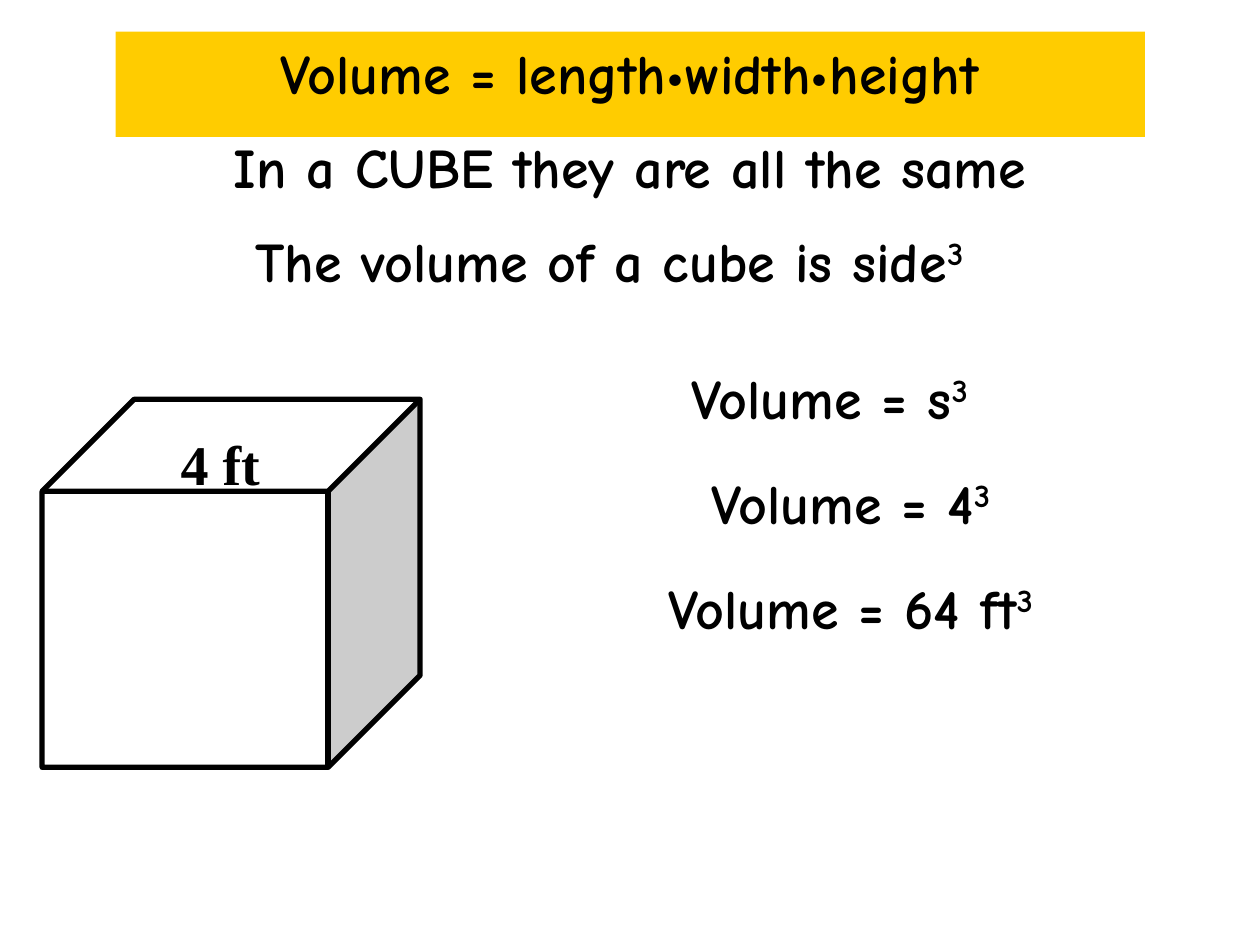
from pptx import Presentation
from pptx.dml.color import RGBColor
from pptx.enum import shapes, text
from pptx.util import Cm, Pt

BLACK = RGBColor(0x00, 0x00, 0x00)
WHITE = RGBColor(0xFF, 0xFF, 0xFF)
YELLOW = RGBColor(0xFF, 0xCC, 0x00)

LINE_HEIGHT = 1.6


def place(shape, left, top, width, height):
    shape.left, shape.top = Cm(left), Cm(top)
    shape.width, shape.height = Cm(width), Cm(height)


def write(shape, words, power="", font="Comic Neue", size=32,
          align=text.PP_ALIGN.CENTER):
    """Fill a shape with one bold line, ending in an optional exponent."""
    frame = shape.text_frame
    frame.word_wrap = True
    frame.auto_size = text.MSO_AUTO_SIZE.SHAPE_TO_FIT_TEXT
    frame.vertical_anchor = text.MSO_ANCHOR.TOP
    para = frame.paragraphs[0]
    para.alignment = align
    for part in filter(None, (words, power)):
        span = para.add_run()
        span.text = part
        span.font.name = font
        span.font.size = Pt(size)
        span.font.bold = True
        span.font.color.rgb = BLACK
    if power:
        span.font._element.set("baseline", "30000")


def add_line(page, left, top, width, words, **style):
    box = page.shapes.add_textbox(Cm(left), Cm(top), Cm(width), Cm(LINE_HEIGHT))
    write(box, words, **style)


def add_title(page, left, top, width):
    title = page.shapes.title
    place(title, left, top, width, LINE_HEIGHT)
    title.fill.solid()
    title.fill.fore_color.rgb = YELLOW
    write(title, "Volume = length•width•height")


def add_cube(page, left, top, width, height):
    cube = page.shapes.add_shape(shapes.MSO_SHAPE.CUBE, Cm(left), Cm(top),
                                 Cm(width), Cm(height))
    cube.shadow.inherit = False
    cube.adjustments[0] = 0.25
    cube.fill.solid()
    cube.fill.fore_color.rgb = WHITE
    cube.line.color.rgb = BLACK
    cube.line.width = Pt(3)
    # Side length on the top face
    add_line(page, left + 2.54, top + 0.48, 4.45, "4 ft",
             font="Times New Roman", align=text.PP_ALIGN.LEFT)


def add_rules(page, left, top, width):
    add_line(page, left, top, width, "In a CUBE they are all the same")
    add_line(page, left - 0.42, top + 1.9, width,
             "The volume of a cube is side", power="3")


def add_solution(page, left, top, width):
    steps = [("s", -0.42), ("4", 0), ("64 ft", 0)]
    for row, (value, shift) in enumerate(steps):
        add_line(page, left + shift, top + row * 2.12, width,
                 f"Volume = {value}", power="3")


def main():
    deck = Presentation()
    deck.slide_width, deck.slide_height = Cm(25.4), Cm(19.05)
    page = deck.slides.add_slide(deck.slide_layouts[5])

    add_title(page, 2.33, 0.64, 20.75)
    add_rules(page, 2.33, 2.54, 20.75)
    add_cube(page, 0.85, 8.05, 7.62, 7.42)
    add_solution(page, 12.07, 7.2, 10.16)

    deck.save("out.pptx")


if __name__ == "__main__":
    main()
